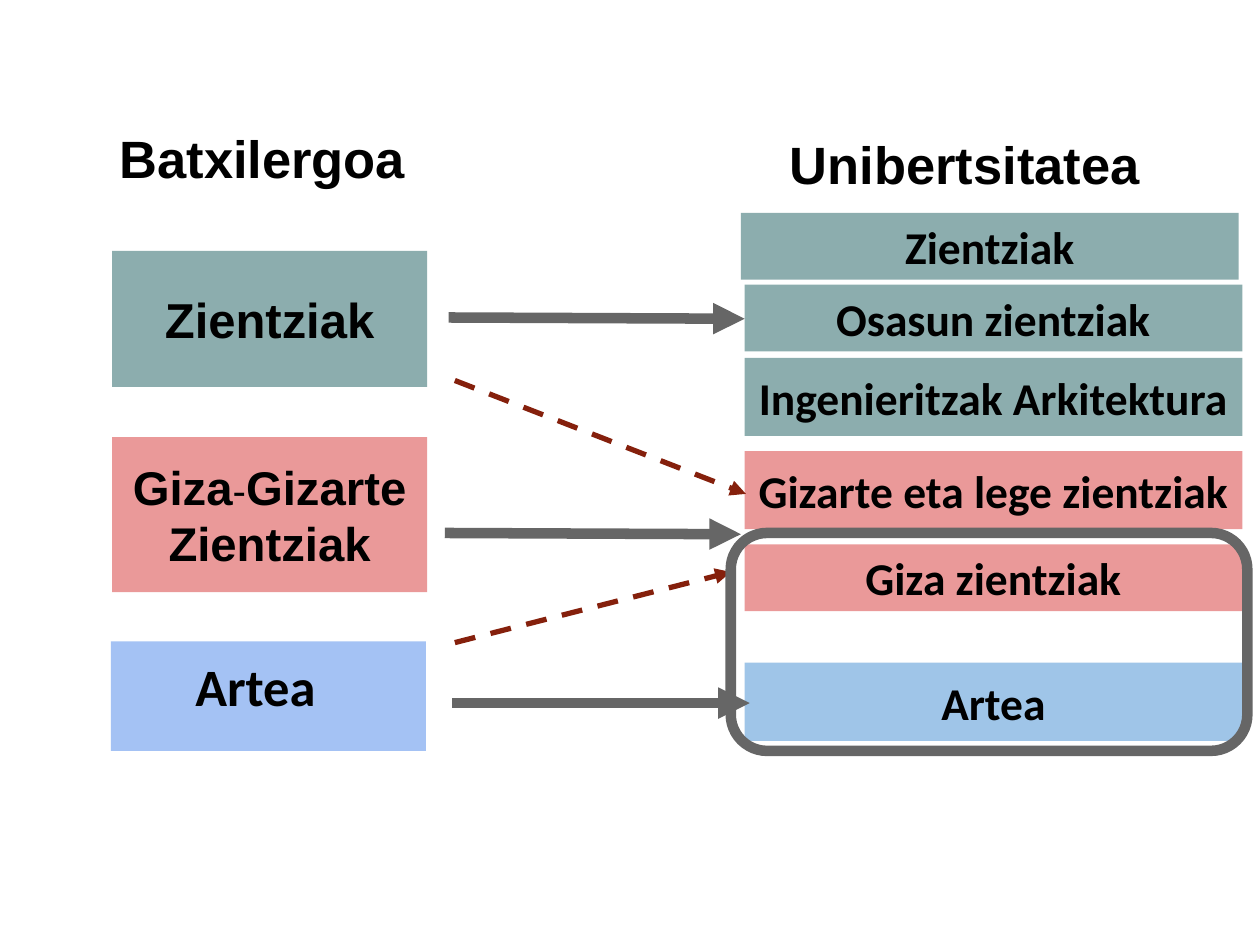
from dataclasses import dataclass

from lxml import etree
from pptx import Presentation
from pptx.dml.color import RGBColor
from pptx.enum.dml import MSO_LINE
from pptx.enum.shapes import MSO_CONNECTOR, MSO_SHAPE
from pptx.enum.text import MSO_ANCHOR, PP_ALIGN
from pptx.oxml.ns import qn
from pptx.slide import Slide
from pptx.util import Inches, Pt

RECTANGLE = MSO_SHAPE.RECTANGLE
ROUNDED = MSO_SHAPE.ROUNDED_RECTANGLE
STRAIGHT = MSO_CONNECTOR.STRAIGHT
DASH = MSO_LINE.DASH
TOP, MIDDLE = MSO_ANCHOR.TOP, MSO_ANCHOR.MIDDLE
LEFT, CENTER = PP_ALIGN.LEFT, PP_ALIGN.CENTER

COLORS = {
    "text": "000000",
    "science": "8CADAE",
    "humanities": "EA9999",
    "school_art": "A4C2F4",
    "university_art": "9FC5E8",
    "main": "666666",
    "alternative": "85200C",
}


@dataclass
class Diagram:
    """Draws headings, boxes, frames and arrows on the current slide."""

    slide: Slide

    def color(self, name):
        return RGBColor.from_string(COLORS[name])

    def set_text(self, shape, runs, anchor, align, insets):
        frame = shape.text_frame
        left, vertical = insets
        layout = {
            "word_wrap": True,
            "vertical_anchor": anchor,
            "margin_left": Inches(left),
            "margin_right": Inches(0.1),
            "margin_top": Inches(vertical),
            "margin_bottom": Inches(vertical),
        }
        for name, value in layout.items():
            setattr(frame, name, value)
        paragraph = frame.paragraphs[0]
        paragraph.alignment = align
        for text, font, size, bold in runs:
            run = paragraph.add_run()
            run.text = text
            style = {"name": font, "size": Pt(size), "bold": bold}
            for name, value in style.items():
                setattr(run.font, name, value)
            run.font.color.rgb = self.color("text")

    def heading(self, text, *place):
        shape = self.slide.shapes.add_textbox(*map(Inches, place))
        self.set_text(shape, [(text, "Arial", 30, True)], TOP, LEFT, (0.1, 0.1))

    def box(self, runs, fill, place, anchor=MIDDLE, align=CENTER, insets=(0.1, 0.05)):
        shape = self.slide.shapes.add_shape(RECTANGLE, *map(Inches, place))
        shape.shadow.inherit = False
        shape.fill.solid()
        shape.fill.fore_color.rgb = self.color(fill)
        shape.line.fill.background()
        self.set_text(shape, runs, anchor, align, insets)

    def frame(self, *place):
        shape = self.slide.shapes.add_shape(ROUNDED, *map(Inches, place))
        shape.shadow.inherit = False
        shape.fill.background()
        shape.line.color.rgb = self.color("main")
        shape.line.width = Pt(6)

    def arrow(self, color, width, ends, dash=None):
        connector = self.slide.shapes.add_connector(STRAIGHT, *map(Inches, ends))
        line = connector.line
        line.color.rgb = self.color(color)
        line.width = Pt(width)
        if dash:
            line.dash_style = dash
        properties = connector._element.spPr
        outline = properties.find(qn("a:ln"))
        etree.SubElement(outline, qn("a:tailEnd"), type="triangle")
        etree.SubElement(properties, qn("a:effectLst"))


def main():
    presentation = Presentation()
    presentation.slide_width = Inches(10)
    presentation.slide_height = Inches(7.5)
    diagram = Diagram(presentation.slides.add_slide(presentation.slide_layouts[6]))

    diagram.heading("Batxilergoa", 0.85, 0.9, 2.7, 0.78)
    diagram.heading("Unibertsitatea", 6.17, 0.95, 3.03, 0.53)

    fields = [
        ("Zientziak", "science", 5.88, 1.69, 0.53),
        ("Osasun zientziak", "science", 5.91, 2.26, 0.53),
        ("Ingenieritzak Arkitektura", "science", 5.91, 2.84, 0.62),
        ("Gizarte eta lege zientziak", "humanities", 5.91, 3.58, 0.62),
        ("Giza zientziak", "humanities", 5.91, 4.32, 0.53),
        ("Artea", "university_art", 5.91, 5.26, 0.62),
    ]
    for text, fill, left, top, height in fields:
        runs = [(text, "Calibri", 26, True)]
        diagram.box(runs, fill, (left, top, 3.95, height))

    for ends in [(3.61, 5.1, 5.8, 4.54), (3.61, 3.02, 5.92, 3.92)]:
        diagram.arrow("alternative", 3, ends, DASH)
    diagram.frame(5.8, 4.23, 4.1, 1.73)

    science = [("Zientziak", "Arial", 28, True)]
    humanities = [
        ("Giza", "Arial", 27, True),
        ("-", "Arial", 23, False),
        ("Gizarte Zientziak", "Arial", 27, True),
    ]
    art = [("Artea", "Calibri", 30, True)]
    diagram.box(science, "science", (0.89, 1.99, 2.5, 1.08))
    diagram.box(humanities, "humanities", (0.89, 3.47, 2.5, 1.23))
    diagram.box(art, "school_art", (0.88, 5.09, 2.5, 0.87), TOP, LEFT, (0.67, 0.1))

    main_arrows = [
        (3.56, 2.52, 5.91, 2.53),
        (3.53, 4.23, 5.88, 4.24),
        (3.59, 5.58, 5.95, 5.58),
    ]
    for ends in main_arrows:
        diagram.arrow("main", 6, ends)

    presentation.save("out.pptx")


if __name__ == "__main__":
    main()
